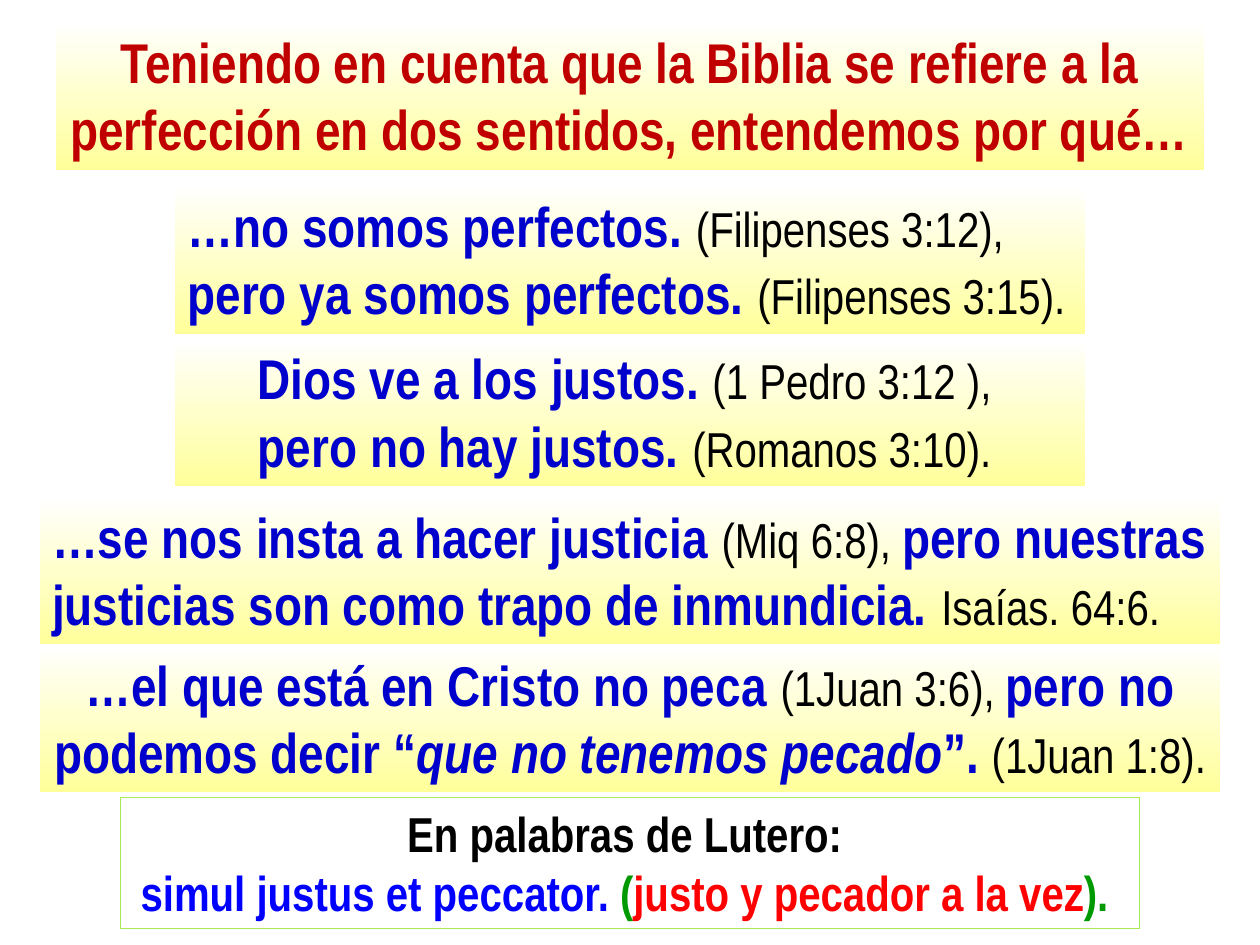
import copy

import lxml.etree
import pptx
import pptx.dml.color
import pptx.enum.text
import pptx.oxml.ns
import pptx.util

Inches, Pt = pptx.util.Inches, pptx.util.Pt
qn = pptx.oxml.ns.qn
ALIGN = pptx.enum.text.PP_ALIGN

THEME = {
    "font": "Arial Narrow",
    "gradient": [(0, "FFFFFF"), (0.5, "FFFFCC"), (1, "FFFF99")],
    "panel": "FFFFFF",
    "border": "A7EA52",
    "border_width": 0.5,
    "outline_width": 0.25,
    "styles": {
        "heading": {"size": 32, "color": "C00000"},
        "claim": {"size": 32, "color": "0000CC"},
        "quote": {"size": 32, "color": "0000CC", "italic": True},
        "verse": {"size": 28, "color": "000000", "bold": False},
        "intro": {"size": 28, "color": "000000"},
        "latin": {"size": 28, "color": "0000FF", "outline": "009900"},
        "bracket": {"size": 28, "color": "009900"},
        "gloss": {"size": 28, "color": "FF0000"},
    },
}

SLIDE_WIDTH, SLIDE_HEIGHT = 10, 7.5
BAND_HEIGHT = 1.18

# Each band: top, width, alignment, paragraphs of (style, text)
BANDS = [
    (0.17, 9.11, ALIGN.CENTER, [
        [("heading", "Teniendo en cuenta que la Biblia se refiere a la "
                     "perfección en dos sentidos, entendemos por qué…")],
    ]),
    (1.47, 7.22, ALIGN.LEFT, [
        [("claim", "…no somos perfectos. "), ("verse", "(Filipenses 3:12),")],
        [("claim", "pero ya somos perfectos. "), ("verse", "(Filipenses 3:15).")],
    ]),
    (2.68, 7.22, ALIGN.CENTER, [
        [("claim", "Dios ve a los justos. "), ("verse", "(1 Pedro 3:12 ), ")],
        [("claim", "pero no hay justos. "), ("verse", "(Romanos 3:10). ")],
    ]),
    (3.94, 9.37, ALIGN.LEFT, [
        [("claim", "…se nos insta a hacer justicia "), ("verse", "(Miq 6:8), "),
         ("claim", "pero nuestras justicias son como trapo de inmundicia. "),
         ("verse", "Isaías. 64:6.")],
    ]),
    (5.11, 9.37, ALIGN.CENTER, [
        [("claim", "…el que está en Cristo no peca "), ("verse", "(1Juan 3:6), "),
         ("claim", "pero no podemos decir “"), ("quote", "que no tenemos pecado"),
         ("claim", "”. "), ("verse", "(1Juan 1:8).")],
    ]),
]

LUTHER_TOP, LUTHER_WIDTH, LUTHER_HEIGHT = 6.33, 8.09, 1.04
LUTHER = [
    [("intro", "En palabras de Lutero: ")],
    [("latin", "simul justus et peccator. "), ("bracket", "("),
     ("gloss", "justo y pecador a la vez"), ("bracket", "). ")],
]


def rgb(value):
    return pptx.dml.color.RGBColor.from_string(value)


def add_text(paragraph, text, *, size, color, bold=True, italic=False, outline=None):
    """Append a run whose letters carry a thin outline, by default in their own colour."""
    run = paragraph.add_run()
    run.text = text
    font = run.font
    font.name, font.size, font.bold, font.italic = THEME["font"], Pt(size), bold, italic
    font.color.rgb = rgb(color)
    line = lxml.etree.Element(qn("a:ln"), w=str(int(Pt(THEME["outline_width"]))))
    solid = lxml.etree.SubElement(line, qn("a:solidFill"))
    lxml.etree.SubElement(solid, qn("a:srgbClr"), val=outline or color)
    run._r.get_or_add_rPr().insert(0, line)


def add_box(slide, top, width, height, alignment, paragraphs):
    """Add a horizontally centred text box."""
    left = (SLIDE_WIDTH - width) / 2
    box = slide.shapes.add_textbox(Inches(left), Inches(top), Inches(width), Inches(height))
    frame = box.text_frame
    frame.word_wrap = True
    frame.auto_size = pptx.enum.text.MSO_AUTO_SIZE.SHAPE_TO_FIT_TEXT
    for index, pieces in enumerate(paragraphs):
        paragraph = frame.add_paragraph() if index else frame.paragraphs[0]
        paragraph.alignment = alignment
        for style, text in pieces:
            add_text(paragraph, text, **THEME["styles"][style])
    return box


def fill_gradient(box):
    """Fill from top to bottom with the theme's three stops."""
    box.fill.gradient()
    box.fill.gradient_angle = 270
    stop_list = box._element.spPr.find(".//" + qn("a:gsLst"))
    stop_list.append(copy.deepcopy(stop_list[0]))
    for stop, (position, color) in zip(box.fill.gradient_stops, THEME["gradient"]):
        stop.position = position
        stop.color.rgb = rgb(color)


def main():
    deck = pptx.Presentation()
    deck.slide_width, deck.slide_height = Inches(SLIDE_WIDTH), Inches(SLIDE_HEIGHT)
    slide = deck.slides.add_slide(deck.slide_layouts[6])

    for top, width, alignment, paragraphs in BANDS:
        fill_gradient(add_box(slide, top, width, BAND_HEIGHT, alignment, paragraphs))

    luther = add_box(slide, LUTHER_TOP, LUTHER_WIDTH, LUTHER_HEIGHT, ALIGN.CENTER, LUTHER)
    luther.fill.solid()
    luther.fill.fore_color.rgb = rgb(THEME["panel"])
    luther.line.color.rgb = rgb(THEME["border"])
    luther.line.width = Pt(THEME["border_width"])

    deck.save("out.pptx")


if __name__ == "__main__":
    main()
